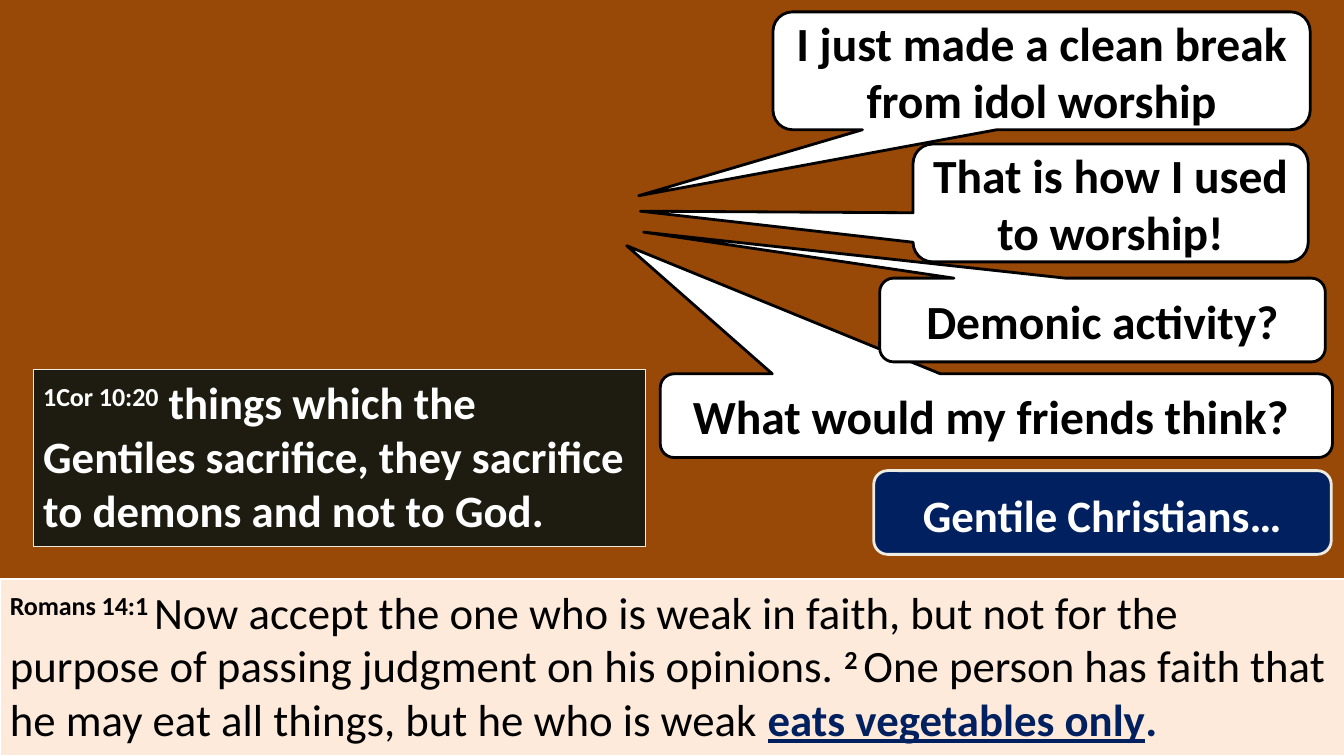
import pptx
import pptx.util
import pptx.dml.color
import pptx.enum.shapes
import pptx.enum.text

Cm, Pt = pptx.util.Cm, pptx.util.Pt
KIND = pptx.enum.shapes.MSO_SHAPE
ALIGN = pptx.enum.text.PP_ALIGN
ANCHOR = pptx.enum.text.MSO_ANCHOR

COLORS = {
    "brown": "984807", "navy": "002060", "white": "FFFFFF", "black": "000000",
    "cream": "EEECE1", "dark": "1E1C11", "peach": "FDEADA",
}


def color(name):
    return pptx.dml.color.RGBColor.from_string(COLORS[name])


def write(para, text, size=32, ink="black", bold=True, under=False, raised=False):
    run = para.add_run()
    run.text = text
    font = run.font
    font.name, font.size, font.bold = "Calibri", Pt(size), bold
    font.color.rgb = color(ink)
    if under:
        font.underline = True
    if raised:
        run._r.get_or_add_rPr().set("baseline", "30000")


class Deck:
    def __init__(self, back):
        self.file = pptx.Presentation()
        self.file.slide_width, self.file.slide_height = Cm(33.87), Cm(19.05)
        self.slide = self.file.slides.add_slide(self.file.slide_layouts[6])
        fill = self.slide.background.fill
        fill.solid()
        fill.fore_color.rgb = color(back)

    def shape(self, kind, box, fill, line, width):
        item = self.slide.shapes.add_shape(kind, *map(Cm, box))
        item.shadow.inherit = False
        item.fill.solid()
        item.fill.fore_color.rgb = color(fill)
        item.line.color.rgb = color(line)
        item.line.width = Pt(width)
        item.text_frame.word_wrap = True
        return item

    def bubble(self, text, box, tip, fill="white", line="black", space=None, **style):
        item = self.shape(KIND.ROUNDED_RECTANGULAR_CALLOUT, box, fill, line, 2)
        item.adjustments[0], item.adjustments[1] = tip
        item.text_frame.vertical_anchor = ANCHOR.MIDDLE
        para = item.text_frame.paragraphs[0]
        para.alignment = ALIGN.CENTER
        if space:
            para.line_spacing = space
        write(para, text, **{"size": 34, **style})

    def verse(self, parts, box, fill, line, width):
        item = self.shape(KIND.RECTANGLE, box, fill, line, width)
        item.text_frame.vertical_anchor = ANCHOR.TOP
        para = item.text_frame.paragraphs[0]
        para.alignment = ALIGN.LEFT
        for text, style in parts:
            write(para, text, **style)


def main():
    deck = Deck("brown")

    # Speaker label
    deck.bubble("Gentile Christians…", (22.02, 11.86, 11.53, 2.11), (-0.22, 0.5),
                fill="navy", line="cream", space=1.07, size=32, ink="white")

    # Thoughts, back to front
    deck.bubble("I just made a clean break from idol worship",
                (19.48, 0.3, 13.54, 2.97), (-0.75, 1.06))
    deck.bubble("What would my friends think? ",
                (16.64, 9.42, 16.94, 2.11), (-0.55, -2.03))
    deck.bubble("That is how I used to worship!",
                (23.01, 3.63, 9.96, 2.97), (-1.19, 0.07))

    # Corinthians verse
    deck.verse([
        ("1Cor 10:20", dict(ink="white", raised=True)),
        (" things which the Gentiles sacrifice, they sacrifice to demons "
         "and not to God.", dict(ink="white")),
    ], (0.84, 9.32, 15.44, 4.45), "dark", "cream", 0.75)

    # Front thought
    deck.bubble("Demonic activity?", (22.17, 7.01, 11.23, 2.11), (-1.03, -1.05))

    # Romans verse
    deck.verse([
        ("Romans 14:1 ", dict(raised=True)),
        ("Now accept the one who is weak in faith, but not for the purpose of "
         "passing judgment on his opinions. ", dict(bold=False)),
        ("2 ", dict(raised=True)),
        ("One person has faith that he may eat all things, but he who is weak ",
         dict(bold=False)),
        ("eats vegetables only", dict(ink="navy", under=True)),
        (".", dict(ink="navy")),
    ], (0, 14.6, 33.91, 4.45), "peach", "white", 1.5)

    deck.file.save("out.pptx")


if __name__ == "__main__":
    main()
